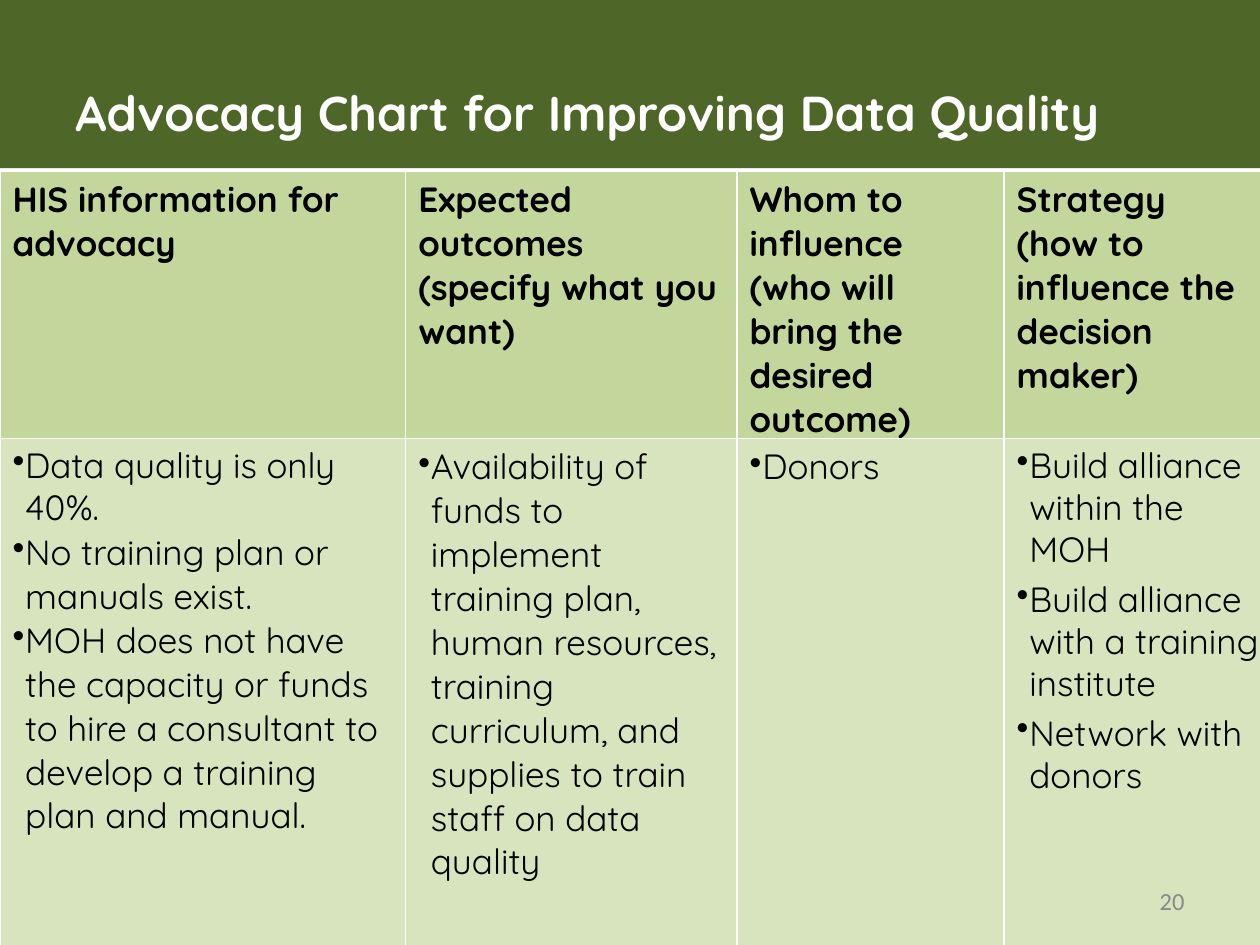
from lxml.etree import SubElement
from pptx import Presentation
from pptx.dml.color import RGBColor
from pptx.enum.shapes import MSO_SHAPE as SHAPE
from pptx.enum.text import MSO_ANCHOR as ANCHOR, PP_ALIGN as ALIGN
from pptx.oxml.ns import qn
from pptx.util import Inches, Pt

WIDTH, HEIGHT = 10, 7.5
COLUMNS = [3.22, 2.63, 2.12, 2.12]
ROWS = [2.12, 4.14]
HEADINGS = [
    ["HIS information for advocacy"],
    ["Expected outcomes (specify what you want)"],
    ["Whom to influence (who will bring the desired outcome)"],
    ["Strategy", "(how to influence the decision maker)"],
]
# Each body paragraph: text, line spacing, points before
TIGHT = (0.96, 4.2)
PLAIN = (1.0, 0)
BODY = [
    [("Data quality is only 40%.", *TIGHT),
     ("No training plan or manuals exist.", 1.0, 0.8),
     ("MOH does not have the capacity or funds to hire a consultant "
      "to develop a training plan and manual.", *PLAIN)],
    [("Availability of funds to implement training plan, human resources, "
      "training curriculum, and supplies to train staff on data quality", *PLAIN)],
    [("Donors", *PLAIN)],
    [("Build alliance within the MOH", *TIGHT),
     ("Build alliance with a training institute", *TIGHT),
     ("Network with donors", *TIGHT)],
]
TITLE_FONT = dict(name="Quicksand", size=Pt(28), bold=True)
HEADING_FONT = dict(name="Quicksand", size=Pt(20), bold=True)
BODY_FONT = dict(name="Quicksand", size=Pt(20), bold=False)
NUMBER_FONT = dict(name="Calibri", size=Pt(14), bold=False)


def rgb(value):
    return RGBColor.from_string(value)


def box(x, y, w, h):
    """Turn shares of the slide's size into lengths."""
    return [Inches(v) for v in (x * WIDTH, y * HEIGHT, w * WIDTH, h * HEIGHT)]


def add_run(p, text, font, color):
    r = p.add_run()
    r.text = text
    for name, value in font.items():
        setattr(r.font, name, value)
    r.font.color.rgb = rgb(color)


def add_band(s, place, color):
    sp = s.shapes.add_shape(SHAPE.RECTANGLE, *place)
    sp.shadow.inherit = False
    sp.fill.solid()
    sp.fill.fore_color.rgb = rgb(color)
    sp.line.fill.background()


def add_text(s, place, text, font, color, align=ALIGN.LEFT):
    tf = s.shapes.add_textbox(*place).text_frame
    tf.word_wrap = True
    tf.vertical_anchor = ANCHOR.MIDDLE
    p = tf.paragraphs[0]
    p.alignment = align
    add_run(p, text, font, color)


def style_cell(cell, fill, border="FFFFFF"):
    tcPr = cell._tc.get_or_add_tcPr()
    for side in ("a:lnL", "a:lnR", "a:lnT", "a:lnB"):
        ln = SubElement(tcPr, qn(side), w=str(Pt(1)))
        SubElement(SubElement(ln, qn("a:solidFill")), qn("a:srgbClr"), val=border)
    cell.fill.solid()
    cell.fill.fore_color.rgb = rgb(fill)


def add_bullet(p, indent=Inches(0.1)):
    pPr = p._p.get_or_add_pPr()
    pPr.set("marL", str(indent))
    pPr.set("indent", str(-indent))
    SubElement(pPr, qn("a:buChar"), char="•")


def fill_cell(cell, paragraphs, font, bulleted):
    tf = cell.text_frame
    for i, (text, spacing, before) in enumerate(paragraphs):
        p = tf.add_paragraph() if i else tf.paragraphs[0]
        p.line_spacing = spacing
        p.space_before = Pt(before)
        if bulleted:
            add_bullet(p)
        add_run(p, text, font, "000000")


def add_chart_table(s, left, top):
    table = s.shapes.add_table(len(ROWS), len(COLUMNS), Inches(left), Inches(top),
                               Inches(sum(COLUMNS)), Inches(sum(ROWS))).table
    for column, width in zip(table.columns, COLUMNS):
        column.width = Inches(width)
    for row, height in zip(table.rows, ROWS):
        row.height = Inches(height)
    for c, (heading, body) in enumerate(zip(HEADINGS, BODY)):
        head_cell, body_cell = table.cell(0, c), table.cell(1, c)
        style_cell(head_cell, "C3D69B")
        style_cell(body_cell, "D7E4BD")
        fill_cell(head_cell, [(text, *PLAIN) for text in heading], HEADING_FONT, False)
        fill_cell(body_cell, body, BODY_FONT, True)


def main():
    prs = Presentation()
    prs.slide_width, prs.slide_height = Inches(WIDTH), Inches(HEIGHT)
    s = prs.slides.add_slide(prs.slide_layouts[6])
    add_band(s, box(-0.014, -0.015, 1.027, 0.193), "4F6629")
    add_text(s, box(0.05, 0.056, 0.892, 0.125),
             "Advocacy Chart for Improving Data Quality", TITLE_FONT, "FFFFFF")
    add_chart_table(s, 0, 1.36)
    add_text(s, box(0.717, 0.927, 0.233, 0.053), "20", NUMBER_FONT, "898989", ALIGN.RIGHT)
    prs.save("out.pptx")


if __name__ == "__main__":
    main()
